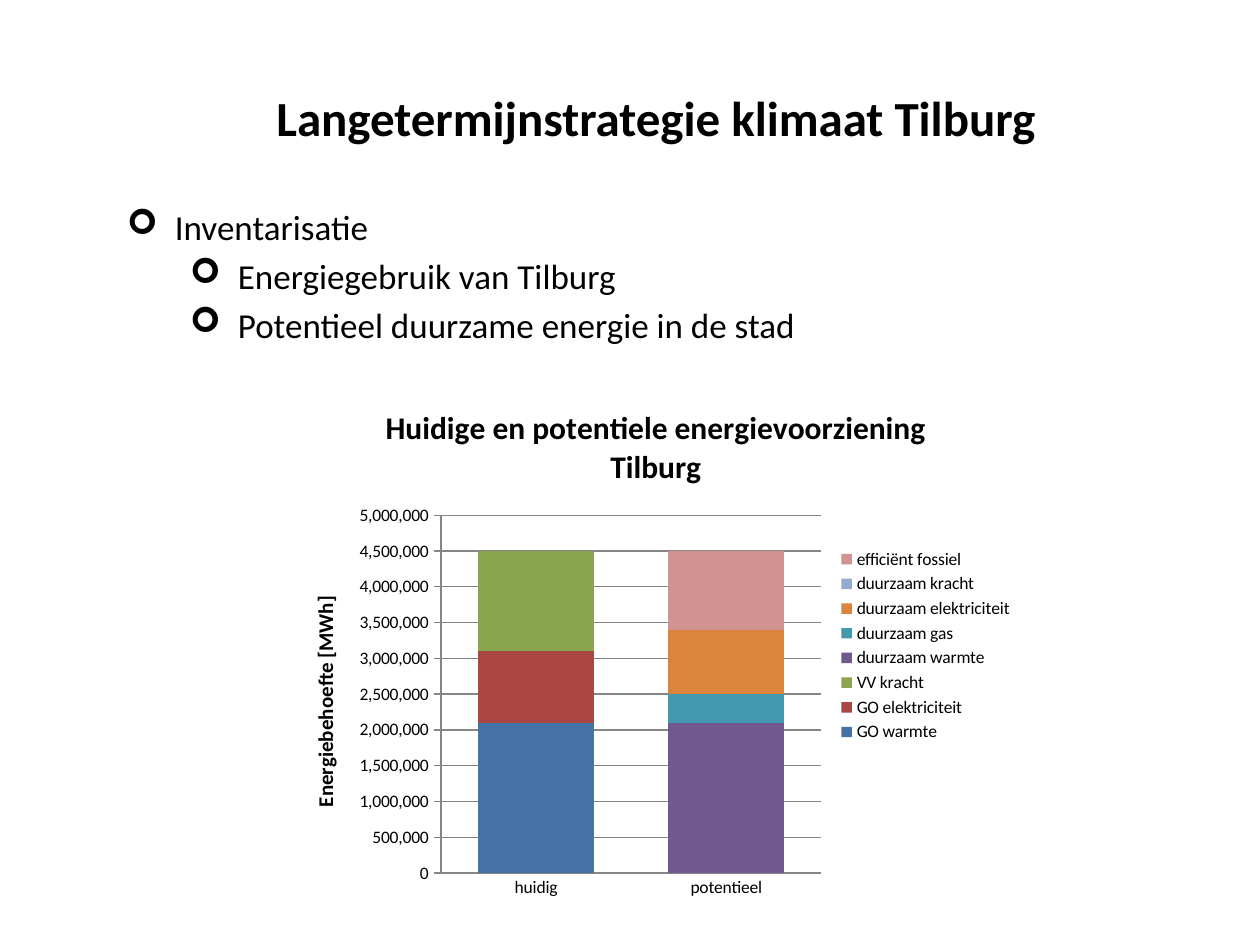
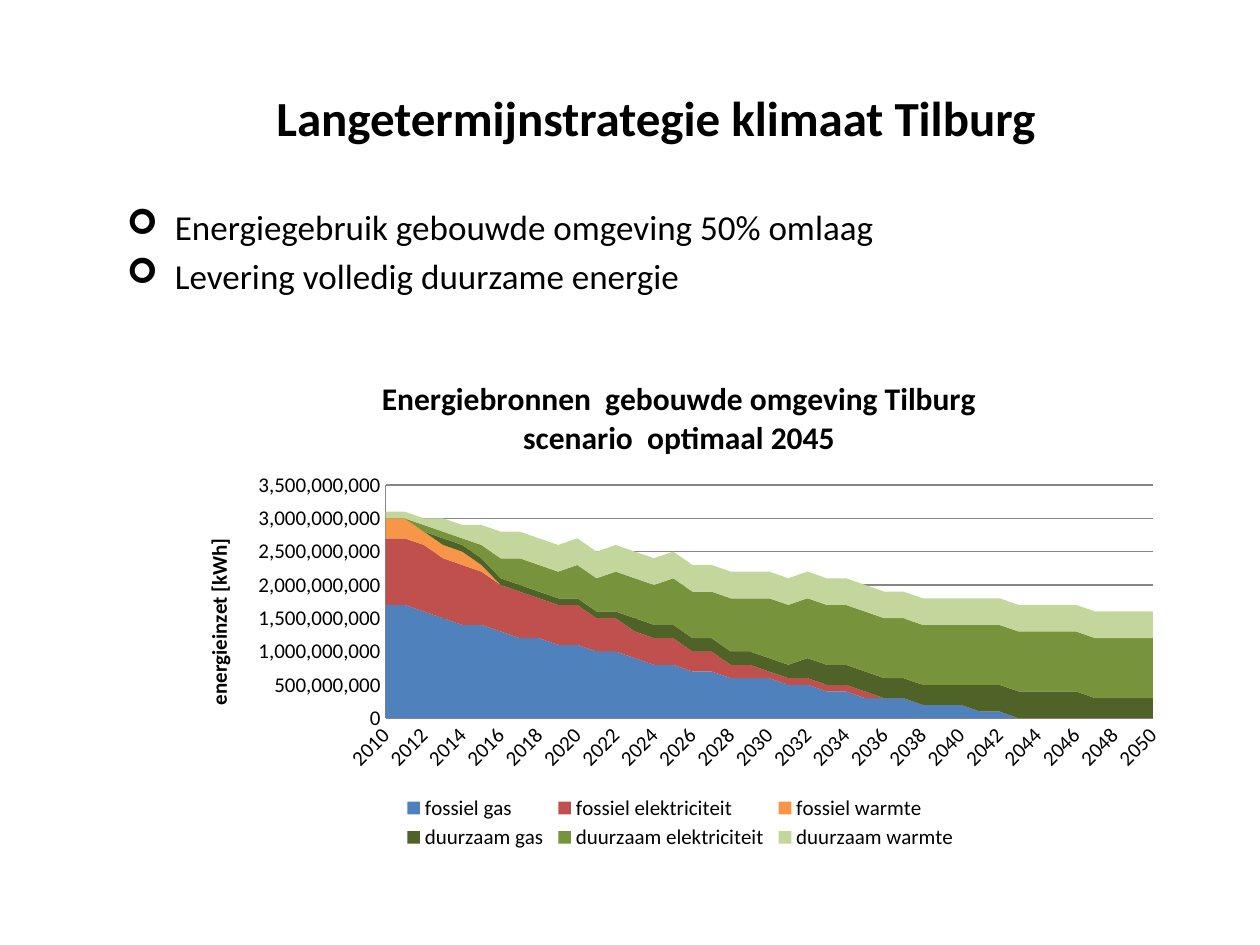
from lxml import etree
from pptx import Presentation
from pptx.chart.data import CategoryChartData
from pptx.dml.color import RGBColor
from pptx.enum.chart import XL_CHART_TYPE, XL_LEGEND_POSITION, XL_TICK_MARK
from pptx.enum.text import MSO_ANCHOR, PP_ALIGN
from pptx.oxml.ns import qn
from pptx.util import Emu, Pt

PX = 9144
FONT = "Calibri"
BULLET_FONT = "Wingdings"
BLACK = RGBColor(0x00, 0x00, 0x00)
GREY = RGBColor(0x86, 0x86, 0x86)
COLUMN, AREA = XL_CHART_TYPE.COLUMN_STACKED, XL_CHART_TYPE.AREA_STACKED
RIGHT, BOTTOM = XL_LEGEND_POSITION.RIGHT, XL_LEGEND_POSITION.BOTTOM
NO_TICK, TICK_OUT = XL_TICK_MARK.NONE, XL_TICK_MARK.OUTSIDE
CENTER, MIDDLE = PP_ALIGN.CENTER, MSO_ANCHOR.MIDDLE
TITLE = "Langetermijnstrategie klimaat Tilburg"
UNIT = 100_000
MLN = 1_000_000


def style(font, size, bold=False):
    for name, value in {"name": FONT, "size": Pt(size), "bold": bold}.items():
        setattr(font, name, value)
    font.color.rgb = BLACK


def place(parent, index, box, frame, inner=False):
    for old in parent.findall(qn("c:layout")):
        parent.remove(old)
    layout = etree.Element(qn("c:layout"))
    manual = etree.SubElement(layout, qn("c:manualLayout"))
    settings = {"layoutTarget": "inner"} if inner else {}
    settings.update(xMode="edge", yMode="edge")
    for tag, value, full in zip("xywh", box, frame[2:] * 2):
        settings[tag] = value / full
    for tag, value in settings.items():
        etree.SubElement(manual, qn("c:" + tag)).set("val", str(value))
    parent.insert(index, layout)


supply = [
    ("GO warmte", (21, None), RGBColor(0x45, 0x72, 0xA7)),
    ("GO elektriciteit", (10, None), RGBColor(0xAA, 0x46, 0x43)),
    ("VV kracht", (14, None), RGBColor(0x89, 0xA5, 0x4E)),
    ("duurzaam warmte", (None, 21), RGBColor(0x71, 0x58, 0x8F)),
    ("duurzaam gas", (None, 4), RGBColor(0x41, 0x98, 0xAF)),
    ("duurzaam elektriciteit", (None, 9), RGBColor(0xDB, 0x84, 0x3D)),
    ("duurzaam kracht", (None, None), RGBColor(0x93, 0xA9, 0xCF)),
    ("efficiënt fossiel", (None, 11), RGBColor(0xD1, 0x93, 0x92)),
]

scenario = [
    ("fossiel gas",
     [17, 17, 16, 15, 14, 14, 13, 12, 12, 11, 11, 10, 10, 9, 8, 8, 7, 7, 6, 6, 6,
      5, 5, 4, 4, 3, 3, 3, 2, 2, 2, 1, 1] + [0] * 8, RGBColor(0x4F, 0x81, 0xBD)),
    ("fossiel elektriciteit",
     [10, 10, 10, 9, 9, 8, 7, 7, 6, 6, 6, 5, 5, 4, 4, 4, 3, 3, 2, 2]
     + [1] * 6 + [0] * 15, RGBColor(0xC0, 0x50, 0x4D)),
    ("fossiel warmte",
     [3, 3, 2, 2, 2, 1] + [0] * 35, RGBColor(0xF7, 0x96, 0x46)),
    ("duurzaam gas",
     [0] * 3 + [1] * 10 + [2] * 9 + [3] * 9 + [4] * 6 + [3] * 4,
     RGBColor(0x4F, 0x62, 0x28)),
    ("duurzaam elektriciteit",
     [0, 0, 1, 1, 1, 2, 3, 4, 4, 4, 5, 5, 6, 6, 6, 7, 7, 7, 8, 8] + [9] * 21,
     RGBColor(0x77, 0x93, 0x3C)),
    ("duurzaam warmte",
     [1, 1, 1, 2, 2, 3] + [4] * 35, RGBColor(0xC3, 0xD6, 0x9B)),
]

slides = [
    dict(bullets=[(0, "Inventarisatie"), (1, "Energiegebruik van Tilburg"),
                  (1, "Potentieel duurzame energie in de stad")],
         text_height=205, kind=COLUMN, box=(227, 304, 587, 417),
         cats=["huidig", "potentieel"], series=supply, unit=UNIT,
         title="Huidige en potentiele energievoorziening Tilburg",
         axis_title="Energiebehoefte [MWh]", size=10, tick=TICK_OUT,
         top=5 * MLN, step=MLN // 2, legend=RIGHT,
         plot_box=(123, 105, 302, 284), legend_box=(437, 128, 141, 161)),
    dict(bullets=[(0, "Energiegebruik gebouwde omgeving 50% omlaag"),
                  (0, "Levering volledig duurzame energie")],
         text_height=125, kind=AREA, box=(141, 284, 796, 394),
         cats=[str(y) for y in range(2010, 2051)], series=scenario, unit=100 * MLN,
         title="Energiebronnen  gebouwde omgeving Tilburg\nscenario  optimaal 2045",
         axis_title="energieinzet [kWh]", size=12, tick=NO_TICK,
         top=3500 * MLN, step=500 * MLN, legend=BOTTOM,
         plot_box=(165, 101, 609, 185), legend_box=(176, 344, 446, 50)),
]

prs = Presentation()
prs.slide_width, prs.slide_height = Emu(1000 * PX), Emu(750 * PX)

for d in slides:
    s = prs.slides.add_slide(prs.slide_layouts[5])
    sp = s.shapes.title
    sp.left, sp.top, sp.width, sp.height = [Emu(v * PX) for v in (91, 30, 859, 125)]
    tf = sp.text_frame
    tf.text = TITLE
    tf.vertical_anchor = MIDDLE
    p = tf.paragraphs[0]
    p.alignment = CENTER
    style(p.runs[0].font, 28, True)

    tf = s.shapes.add_textbox(*[Emu(v * PX) for v in (91, 158, 843, d["text_height"])]).text_frame
    tf.word_wrap = True
    for i, (level, text) in enumerate(d["bullets"]):
        p = tf.add_paragraph() if i else tf.paragraphs[0]
        p.level = level
        pPr = p._p.get_or_add_pPr()
        pPr.set("marL", str((38 + 50 * level) * PX))
        pPr.set("indent", str(-38 * PX))
        etree.SubElement(pPr, qn("a:buFont")).set("typeface", BULLET_FONT)
        etree.SubElement(pPr, qn("a:buChar")).set("char", "➢")
        if i:
            p.space_before = Pt(4)
        r = p.add_run()
        r.text = text
        style(r.font, 20)

    data = CategoryChartData(number_format="#,##0")
    data.categories = d["cats"]
    for name, values, color in d["series"]:
        data.add_series(name, [None if v is None else v * d["unit"] for v in values])
    chart = s.shapes.add_chart(d["kind"], *[Emu(v * PX) for v in d["box"]], data).chart
    style(chart.font, 10)
    chart.has_title = True
    tf = chart.chart_title.text_frame
    tf.text = d["title"]
    for p in tf.paragraphs:
        style(p.runs[0].font, 18, True)

    plot = chart.plots[0]
    plot.vary_by_categories = False
    for series, (name, values, color) in zip(plot.series, d["series"]):
        series.format.fill.solid()
        series.format.fill.fore_color.rgb = color

    cat, val = chart.category_axis, chart.value_axis
    for axis in (cat, val):
        axis.minor_tick_mark = NO_TICK
        axis.format.line.color.rgb = GREY
        style(axis.tick_labels.font, d["size"])
    cat.major_tick_mark = NO_TICK
    cat.has_major_gridlines = False
    val.major_tick_mark = d["tick"]
    val.minimum_scale, val.maximum_scale, val.major_unit = 0, d["top"], d["step"]
    val.tick_labels.number_format = "#,##0"
    val.tick_labels.number_format_is_linked = False
    val.has_major_gridlines = True
    val.major_gridlines.format.line.color.rgb = GREY
    val.major_gridlines.format.line.width = Pt(0.75)
    tf = val.axis_title.text_frame
    tf.text = d["axis_title"]
    tf._txBody.find(qn("a:bodyPr")).set("rot", "-5400000")
    style(tf.paragraphs[0].runs[0].font, 12, True)

    if d["kind"] == COLUMN:
        plot.gap_width, plot.overlap = 64, 100
    else:
        cat._element.find(qn("c:txPr")).find(qn("a:bodyPr")).set("rot", "-2700000")
        skip = etree.Element(qn("c:tickLblSkip"))
        skip.set("val", "2")
        cat._element.find(qn("c:lblOffset")).addnext(skip)
        val._element.find(qn("c:crossBetween")).set("val", "midCat")

    chart.has_legend = True
    legend = chart.legend
    legend.position = d["legend"]
    legend.include_in_layout = False
    style(legend.font, d["size"])
    place(legend._element, 1, d["legend_box"], d["box"])
    place(chart._chartSpace.chart.plotArea, 0, d["plot_box"], d["box"], True)

prs.save("out.pptx")
